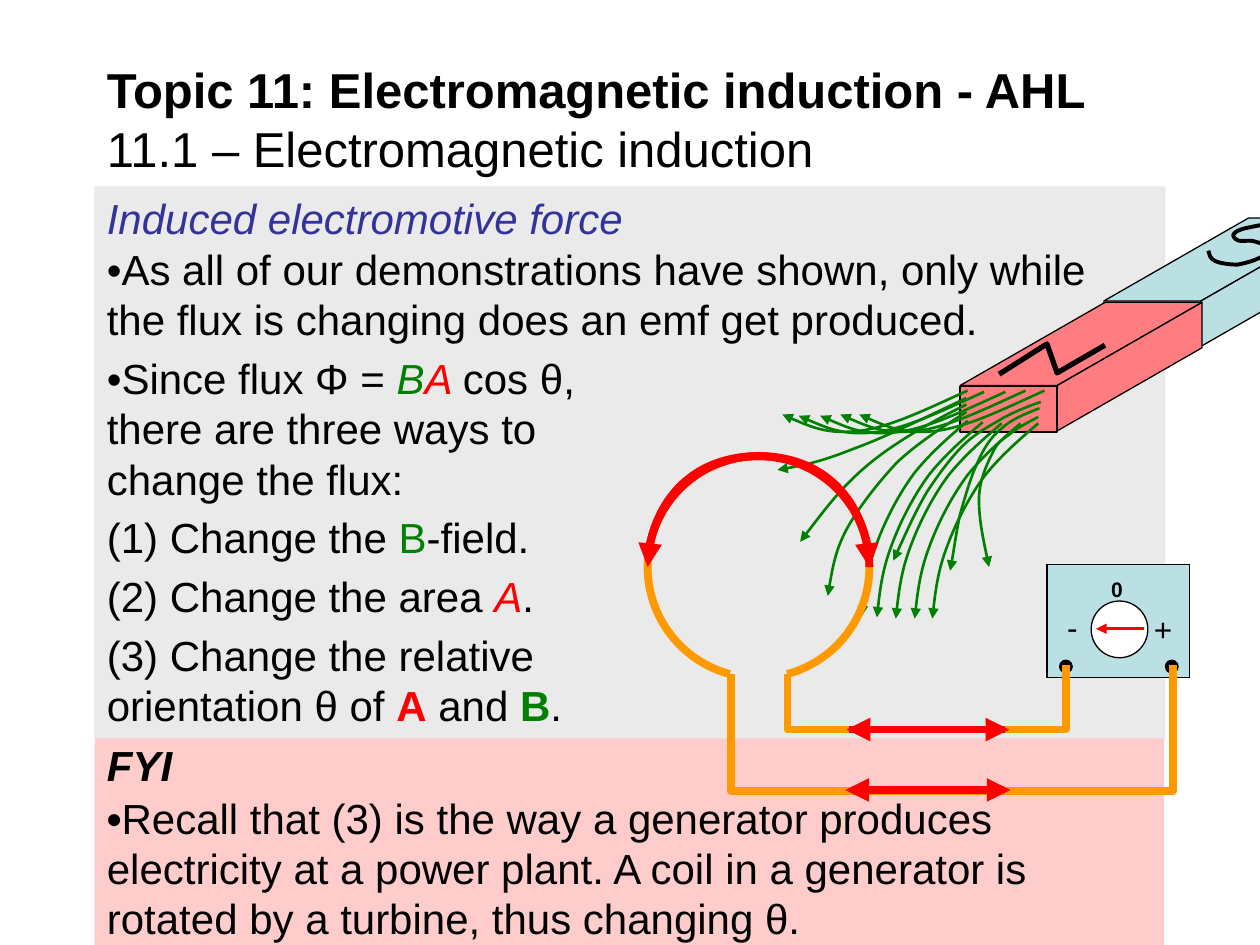
"""Build a slide on induced emf: text panels, a bar magnet, a wire coil and a meter."""
from math import cos, radians, sin, tan

from lxml import etree
from pptx import Presentation
from pptx.dml.color import RGBColor
from pptx.enum.shapes import MSO_CONNECTOR, MSO_SHAPE
from pptx.enum.text import MSO_ANCHOR
from pptx.oxml.ns import qn
from pptx.util import Inches, Pt

RECTANGLE, OVAL = MSO_SHAPE.RECTANGLE, MSO_SHAPE.OVAL
STRAIGHT = MSO_CONNECTOR.STRAIGHT
MIDDLE, TOP = MSO_ANCHOR.MIDDLE, MSO_ANCHOR.TOP
BLACK, WHITE, RED, GREEN, WIRE = "000000", "FFFFFF", "FF0000", "008000", "FF9900"
INDIGO, GREY, PINK, BLUE, CORAL = "333399", "EAEAEA", "FFCCCC", "BBE0E3", "FF7C80"

WIDTH, HEIGHT = 10, 7.5
LEFT, PANEL_WIDTH = 0.75, 8.5

# Each paragraph is a list of runs: text, colour, style letters.
TITLE = [[("Topic 11: Electromagnetic induction - AHL\v", BLACK, "b"),
          ("11.1 – Electromagnetic induction", BLACK, "")]]
BODY = [
    [("Induced electromotive force", INDIGO, "i")],
    [("•As all of our demonstrations have shown, only while the flux is "
      "changing does an emf get produced.", BLACK, "")],
    [("•Since flux Φ = ", BLACK, ""), ("B", GREEN, "i"), ("A ", RED, "i"),
     ("cos θ,\vthere are three ways to\vchange the flux:", BLACK, "")],
    [("(1) Change the ", BLACK, ""), ("B", GREEN, ""), ("-field.", BLACK, "")],
    [("(2) Change the area ", BLACK, ""), ("A", RED, "i"), (".", BLACK, "")],
    [("(3) Change the relative\vorientation θ of ", BLACK, ""), ("A", RED, "b"),
     (" and ", BLACK, ""), ("B", GREEN, "b"), (".", BLACK, "")],
]
FYI = [
    [("FYI", BLACK, "bi")],
    [("•", BLACK, "b"),
     ("Recall that (3) is the way a generator produces electricity at a power plant. "
      "A coil in a generator is rotated by a turbine, thus changing θ.", BLACK, "")],
]

POLES = [(8.76, 2.39, BLUE), (7.62, 3.06, CORAL)]
FACE_WIDTH, FACE_HEIGHT, DEPTH_X, DEPTH_Y = 0.77, 0.36, 1.15, -0.66
LETTER_N = [(7.93, 2.97), (8.31, 2.73), (8.39, 2.96), (8.77, 2.74)]
LETTER_S = [(10.27, 1.86), (10.26, 1.85), (10.26, 1.82), (10.23, 1.81), (10.2, 1.8),
            (10.14, 1.78), (10.08, 1.78), (10.02, 1.78), (9.94, 1.8), (9.89, 1.81),
            (9.84, 1.82), (9.8, 1.84), (9.79, 1.86), (9.78, 1.87), (9.8, 1.9),
            (9.83, 1.91), (9.86, 1.92), (9.93, 1.9), (9.97, 1.92), (10.01, 1.93),
            (10.08, 1.96), (10.08, 1.98), (10.08, 2), (10.04, 2.03), (9.99, 2.05),
            (9.95, 2.07), (9.88, 2.09), (9.82, 2.1), (9.76, 2.1), (9.68, 2.09),
            (9.64, 2.07), (9.6, 2.05), (9.6, 2.02), (9.59, 1.99)]

# Each family of field lines: starting points, then Bézier points relative to the start.
FIELD_LINES = [
    ([(7.67, 3.27)], [(-.19, .12), (-.39, .25), (-.55, .4), (-.7, .56), (-.85, .75),
                      (-.95, .93), (-1.04, 1.1), (-1.07, 1.28), (-1.1, 1.46)]),
    ([(7.67, 3.21)], [(-.28, .14), (-.55, .29), (-.77, .47), (-.99, .65),
                      (-1.15, .87), (-1.32, 1.09)]),
    ([(7.67, 3.16)], [(-.32, .15), (-.64, .31), (-.89, .4), (-1.14, .5),
                      (-1.32, .54), (-1.5, .57)]),
    ([(7.68, 3.1), (7.81, 3.11), (7.98, 3.11), (8.14, 3.1), (8.29, 3.1)],
     [(-.31, .14), (-.61, .29), (-.86, .32), (-1.11, .35), (-1.29, .27), (-1.47, .19)]),
    ([(7.68, 3.34), (7.8, 3.35), (7.95, 3.36), (8.1, 3.36), (8.24, 3.36)],
     [(-.15, .13), (-.29, .25), (-.42, .41), (-.54, .57), (-.65, .78),
      (-.72, .97), (-.79, 1.15), (-.82, 1.35), (-.84, 1.55)]),
    ([(8.24, 3.31)], [(-.08, .04), (-.17, .09), (-.23, .14), (-.3, .19), (-.33, .21),
                      (-.37, .3), (-.41, .38), (-.47, .51), (-.47, .66), (-.47, .81),
                      (-.43, 1), (-.39, 1.19)]),
    ([(8.25, 3.24)], [(-.05, .02), (-.22, .08), (-.3, .16), (-.39, .23), (-.45, .33),
                      (-.5, .45), (-.55, .56), (-.59, .7), (-.63, .84), (-.66, .98),
                      (-.69, 1.2), (-.71, 1.29)]),
    ([(8.26, 3.19)], [(-.06, .02), (-.22, .08), (-.32, .14), (-.42, .2), (-.52, .25),
                      (-.62, .35), (-.71, .44), (-.8, .56), (-.9, .71), (-.99, .86),
                      (-1.12, 1.15), (-1.17, 1.26)]),
]

COIL_CENTRE, COIL_RADIUS = (6.02, 4.5), 0.88
COIL_ANGLES = (105, 180, 270, 360, 435)
CURRENT_ANGLES = [(190, 270, 360), (360, 270, 180)]
LEADS = [[(5.8, 5.35), (5.8, 6.28), (9.31, 6.28), (9.31, 5.28)],
         [(6.25, 5.35), (6.25, 5.79), (8.46, 5.79), (8.46, 5.28)]]
CURRENTS = [(6.74, 8.01, 5.79), (7.97, 6.71, 6.27), (6.76, 8.02, 6.27), (7.98, 6.72, 5.79)]
METER_OVALS = [(8.66, 4.77, 0.45, WHITE, BLACK), (8.41, 5.24, 0.1, BLACK, BLACK),
               (9.25, 5.24, 0.1, BLACK, BLACK), (8.7, 4.8, 0.38, WHITE, WHITE)]
METER_LABELS = [("-", 8.37, 4.78, 0.31, 0.4, 18, ""), ("0", 8.72, 4.53, 0.42, 0.3, 12, "b"),
                ("+", 9.06, 4.79, 0.31, 0.4, 18, "")]


def rgb(value):
    return RGBColor.from_string(value)


def style_line(item, color, width, arrow):
    item.line.color.rgb = rgb(color)
    item.line.width = Pt(width)
    if arrow:
        etree.SubElement(item.line._get_or_add_ln(), qn("a:tailEnd"), type="triangle")


def style_shape(shape, fill, line, width=0.75, arrow=False):
    shape.shadow.inherit = False
    if fill:
        shape.fill.solid()
        shape.fill.fore_color.rgb = rgb(fill)
    else:
        shape.fill.background()
    if line:
        style_line(shape, line, width, arrow)
    else:
        shape.line.fill.background()


def add_shape(slide, kind, box, fill, line=None):
    shape = slide.shapes.add_shape(kind, *map(Inches, box))
    style_shape(shape, fill, line)


def add_text(slide, box, paragraphs, size, anchor=TOP, gaps=(), fill=None, wrap=True):
    shape = slide.shapes.add_textbox(*map(Inches, box))
    if fill:
        style_shape(shape, fill, None)
    frame = shape.text_frame
    frame.word_wrap, frame.vertical_anchor = wrap, anchor
    for index, runs in enumerate(paragraphs):
        paragraph = frame.add_paragraph() if index else frame.paragraphs[0]
        paragraph.font.size, paragraph.font.name = Pt(size), "Arial"
        paragraph.space_before = Pt(gaps[index] if gaps else 0)
        for text, color, style in runs:
            for part_index, part in enumerate(text.split("\v")):
                if part_index:
                    paragraph.add_line_break()
                if part:
                    run = paragraph.add_run()
                    run.text = part
                    run.font.bold, run.font.italic = "b" in style, "i" in style
                    run.font.color.rgb = rgb(color)


def add_path(slide, points, line, width, fill=None, arrow=False):
    points = [(Inches(x), Inches(y)) for x, y in points]
    builder = slide.shapes.build_freeform(*points[0])
    builder.add_line_segments(points[1:], close=bool(fill))
    shape = builder.convert_to_shape()
    style_shape(shape, fill, line, width, arrow)
    return shape


def add_curve(slide, points, line, width, arrow=False):
    shape = add_path(slide, points, line, width, arrow=arrow)
    outline = next(shape._element.iter(qn("a:path")))
    segments = outline.findall(qn("a:lnTo"))
    for first in range(0, len(segments), 3):
        curve = etree.SubElement(outline, qn("a:cubicBezTo"))
        for segment in segments[first:first + 3]:
            curve.append(segment[0])
            outline.remove(segment)


def add_arrow(slide, start, end, width):
    arrow = slide.shapes.add_connector(STRAIGHT, *map(Inches, start + end))
    etree.SubElement(arrow._element.spPr, qn("a:effectLst"))
    style_line(arrow, RED, width, True)


def on_coil(degrees, along=0):
    angle = radians(degrees)
    return (COIL_CENTRE[0] + COIL_RADIUS * (cos(angle) - along * sin(angle)),
            COIL_CENTRE[1] + COIL_RADIUS * (sin(angle) + along * cos(angle)))


def arc(angles):
    points = [on_coil(angles[0])]
    for start, end in zip(angles, angles[1:]):
        handle = 4 / 3 * tan(radians(end - start) / 4)
        points += [on_coil(start, handle), on_coil(end, -handle), on_coil(end)]
    return points


def add_meter(slide):
    add_shape(slide, RECTANGLE, (8.31, 4.48, 1.13, 0.9), BLUE, BLACK)
    for x, y, size, fill, line in METER_OVALS:
        add_shape(slide, OVAL, (x, y, size, size), fill, line)
    for text, x, y, width, height, size, style in METER_LABELS:
        add_text(slide, (x, y, width, height), [[(text, BLACK, style)]], size, wrap=False)
    add_arrow(slide, (9.08, 4.99), (8.7, 4.99), 1.5)


def add_magnet(slide):
    for x, y, color in POLES:
        right, bottom = x + FACE_WIDTH, y + FACE_HEIGHT
        far_x, far_y = right + DEPTH_X, y + DEPTH_Y
        add_shape(slide, RECTANGLE, (x, y + 0.01, FACE_WIDTH, FACE_HEIGHT), color, BLACK)
        add_path(slide, [(x, y), (x + DEPTH_X, far_y), (far_x, far_y), (right, y)],
                 BLACK, 0.75, color)
        add_path(slide, [(right, bottom), (right, y), (far_x, far_y),
                         (far_x, far_y + FACE_HEIGHT)], BLACK, 0.75, color)
    add_path(slide, LETTER_N, BLACK, 3)
    add_curve(slide, LETTER_S, BLACK, 2.25)
    for starts, offsets in FIELD_LINES:
        for x, y in starts:
            points = [(x, y)] + [(x + dx, y + dy) for dx, dy in offsets]
            add_curve(slide, points, GREEN, 1.5, arrow=True)


def main():
    presentation = Presentation()
    presentation.slide_width, presentation.slide_height = Inches(WIDTH), Inches(HEIGHT)
    slide = presentation.slides.add_slide(presentation.slide_layouts[6])
    add_text(slide, (LEFT, 5.82, 8.49, 1.68), FYI, 24, gaps=(1.2, 1.2), fill=PINK)
    add_text(slide, (LEFT, 1.48, PANEL_WIDTH, 4.38), BODY, 24,
             gaps=(0, 0, 4.8, 4.8, 4.8, 4.8), fill=GREY)
    add_meter(slide)
    add_magnet(slide)
    add_curve(slide, arc(COIL_ANGLES), WIRE, 4.5)
    for lead in LEADS:
        add_path(slide, lead, WIRE, 4.5)
    for angles in CURRENT_ANGLES:
        add_curve(slide, arc(angles), RED, 4.5, arrow=True)
    for start, end, y in CURRENTS:
        add_arrow(slide, (start, y), (end, y), 4.5)
    add_text(slide, (LEFT, 0.45, PANEL_WIDTH, 0.98), TITLE, 28, MIDDLE)
    presentation.save("out.pptx")


if __name__ == "__main__":
    main()
